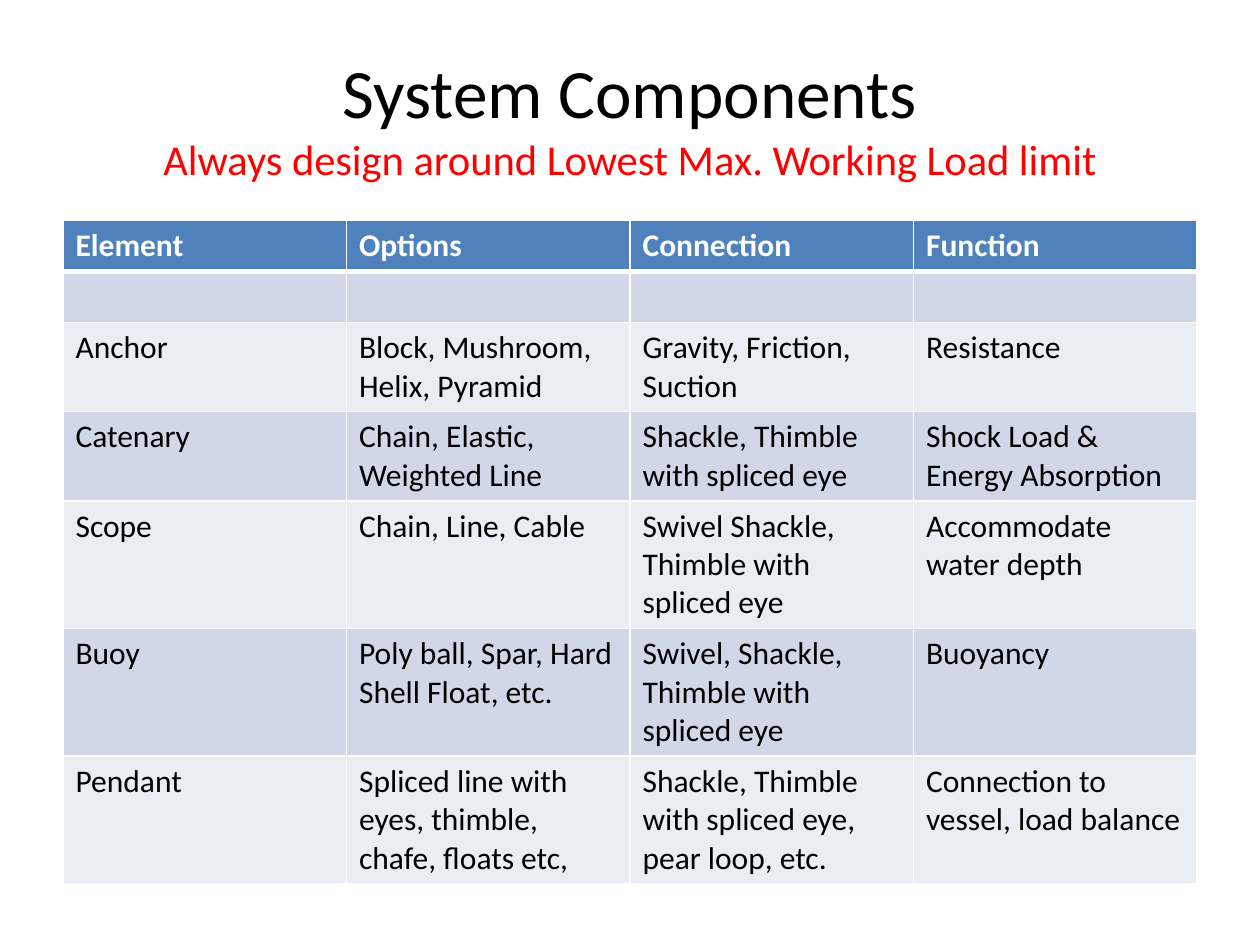
from lxml import etree
from pptx import Presentation
from pptx.dml.color import RGBColor
from pptx.enum.text import MSO_ANCHOR, PP_ALIGN
from pptx.oxml.ns import qn
from pptx.util import Pt

MIDDLE = MSO_ANCHOR.MIDDLE
CENTER = PP_ALIGN.CENTER
FACE = "Calibri"
WHITE, BLACK, RED = "FFFFFF", "000000", "FF0000"
BLUE, BANDS = "4F81BD", ("D0D8E8", "E9EDF4")
LINE, PAD = 21.9, 7.2

HEAD = [
    ("System Components", {"size": Pt(39.6), "name": FACE}, BLACK),
    ("Always design around Lowest Max. Working Load limit",
     {"size": Pt(24.3), "name": FACE}, RED),
]
ROWS = [
    (1, ["Element", "Options", "Connection", "Function"]),
    (1, ["", "", "", ""]),
    (2, ["Anchor", "Block, Mushroom, Helix, Pyramid",
         "Gravity, Friction, Suction", "Resistance"]),
    (2, ["Catenary", "Chain, Elastic, Weighted Line",
         "Shackle, Thimble with spliced eye", "Shock Load & Energy Absorption"]),
    (3, ["Scope", "Chain, Line, Cable",
         "Swivel Shackle, Thimble with spliced eye", "Accommodate water depth"]),
    (3, ["Buoy", "Poly ball, Spar, Hard Shell Float, etc.",
         "Swivel, Shackle, Thimble with spliced eye", "Buoyancy"]),
    (3, ["Pendant", "Spliced line with eyes, thimble, chafe, floats etc,",
         "Shackle, Thimble with spliced eye, pear loop, etc.",
         "Connection to vessel, load balance"]),
]


def paint(part, tone):
    part.rgb = RGBColor.from_string(tone)


def style(item, form):
    for key, value in form.items():
        setattr(item, key, value)


def write(para, text, form, tone):
    run = para.add_run()
    run.text = text
    style(run.font, form)
    paint(run.font.color, tone)


def edge(cell, wide):
    props = cell._tc.get_or_add_tcPr()
    for spot, (side, width) in enumerate(wide.items()):
        line = etree.Element(qn("a:" + side), w=str(Pt(width)))
        fill = etree.SubElement(line, qn("a:solidFill"))
        etree.SubElement(fill, qn("a:srgbClr"), val=WHITE)
        props.insert(spot, line)


def title(slide, left, top, width, height):
    box = slide.shapes.add_textbox(Pt(left), Pt(top), Pt(width), Pt(height))
    frame = box.text_frame
    style(frame, {"word_wrap": True, "vertical_anchor": MIDDLE})
    para = frame.paragraphs[0]
    para.alignment = CENTER
    for spot, part in enumerate(HEAD):
        if spot:
            para.add_line_break()
        write(para, *part)


def grid(slide, left, top, width):
    count = len(ROWS[0][1])
    tall = [LINE * lines + PAD for lines, _ in ROWS]
    table = slide.shapes.add_table(
        len(ROWS), count, Pt(left), Pt(top), Pt(width), Pt(sum(tall))).table
    for col in table.columns:
        col.width = Pt(width / count)
    for y, (_, texts) in enumerate(ROWS):
        table.rows[y].height = Pt(tall[y])
        first = y == 0
        form = {"size": Pt(18), "name": FACE, "bold": first}
        wide = {"lnL": 1, "lnR": 1, "lnT": 3 if y == 1 else 1,
                "lnB": 3 if first else 1}
        for x, text in enumerate(texts):
            cell = table.cell(y, x)
            cell.fill.solid()
            paint(cell.fill.fore_color, BLUE if first else BANDS[(y - 1) % 2])
            edge(cell, wide)
            if text:
                write(cell.text_frame.paragraphs[0], text, form,
                      WHITE if first else BLACK)


def main():
    deck = Presentation()
    style(deck, {"slide_width": Pt(720), "slide_height": Pt(540)})
    slide = deck.slides.add_slide(deck.slide_layouts[6])
    title(slide, 36, 21.6, 648, 90)
    grid(slide, 36, 126, 648)
    deck.save("out.pptx")


if __name__ == "__main__":
    main()
